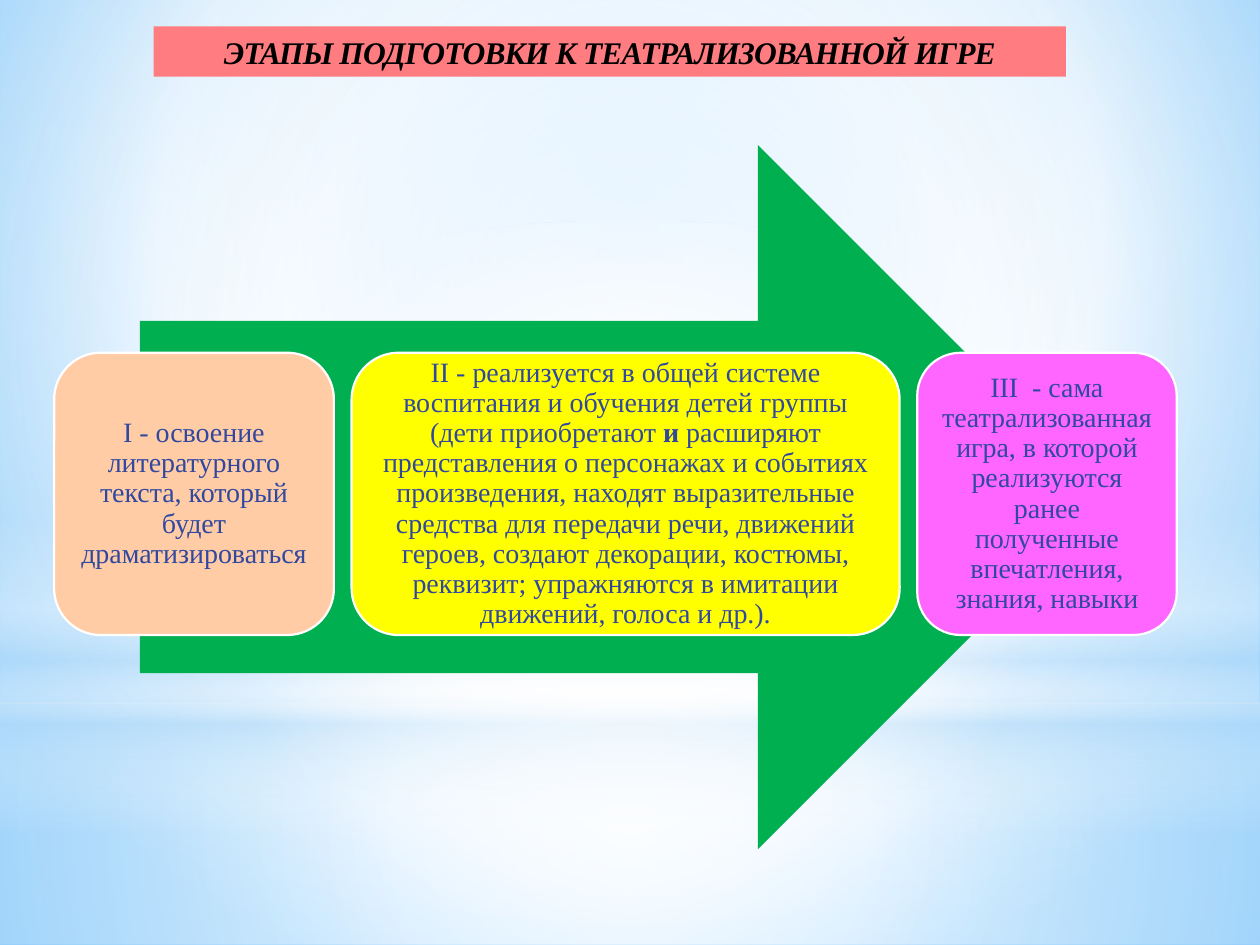
from dataclasses import dataclass
from typing import Optional

from lxml.etree import SubElement
from pptx import Presentation
from pptx.dml.color import RGBColor
from pptx.enum.shapes import MSO_SHAPE
from pptx.enum.text import MSO_ANCHOR, PP_ALIGN
from pptx.oxml.ns import qn
from pptx.util import Inches, Pt

# Grid of 100 columns by 75 rows
COLUMNS, ROWS = 100, 75
WIDTH, HEIGHT = Inches(10), Inches(7.5)
FONT = "Times New Roman"
INK, WHITE, SKY = "31489F", "FFFFFF", "B4DCFA"
CENTRE = (50, 50, 50, 50)


@dataclass
class Area:
    column: float
    row: float
    columns: float
    rows: float


@dataclass
class Gradient:
    stops: list  # (position %, colour, opacity %)
    focus: Optional[tuple] = None  # left, top, right, bottom %; None runs downwards


@dataclass
class Stage:
    columns: float
    colour: str
    runs: list  # (text, bold)


def rgb(colour: str) -> RGBColor:
    return RGBColor.from_string(colour)


def add_block(slide, kind, area: Area, colour: str):
    block = slide.shapes.add_shape(
        kind,
        int(WIDTH * area.column / COLUMNS), int(HEIGHT * area.row / ROWS),
        int(WIDTH * area.columns / COLUMNS), int(HEIGHT * area.rows / ROWS))
    block.shadow.inherit = False
    block.fill.solid()
    block.fill.fore_color.rgb = rgb(colour)
    block.line.fill.background()
    return block


def apply_gradient(element, gradient: Gradient) -> None:
    """Turn the first solid fill inside the element into a gradient."""
    solid = element.find(".//" + qn("a:solidFill"))
    fill = solid.makeelement(qn("a:gradFill"), {"rotWithShape": "1"})
    stops = SubElement(fill, qn("a:gsLst"))
    for position, colour, opacity in gradient.stops:
        stop = SubElement(stops, qn("a:gs"), pos=str(position * 1000))
        tint = SubElement(stop, qn("a:srgbClr"), val=colour)
        if opacity < 100:
            SubElement(tint, qn("a:alpha"), val=str(opacity * 1000))
    if gradient.focus:
        circle = SubElement(fill, qn("a:path"), {"path": "circle"})
        sides = {side: str(share * 1000) for side, share in zip("ltrb", gradient.focus)}
        SubElement(circle, qn("a:fillToRect"), sides)
    else:
        SubElement(fill, qn("a:lin"), ang=str(90 * 60000), scaled="0")
    solid.getparent().replace(solid, fill)


def add_run(paragraph, text: str, size: float, colour: str, bold=False, italic=False):
    run = paragraph.add_run()
    run.text = text
    font = run.font
    font.name, font.size, font.bold, font.italic = FONT, Pt(size), bold, italic
    font.color.rgb = rgb(colour)
    return run


def centred_paragraph(block):
    frame = block.text_frame
    frame.word_wrap = True
    frame.vertical_anchor = MSO_ANCHOR.MIDDLE
    paragraph = frame.paragraphs[0]
    paragraph.alignment = PP_ALIGN.CENTER
    return paragraph


def add_stage(slide, stage: Stage, area: Area) -> None:
    card = add_block(slide, MSO_SHAPE.ROUNDED_RECTANGLE, area, stage.colour)
    card.line.color.rgb = rgb(WHITE)
    card.line.width = Pt(1.25)
    paragraph = centred_paragraph(card)
    frame = card.text_frame
    frame.margin_left = frame.margin_right = Inches(0.07)
    frame.margin_top = frame.margin_bottom = Inches(0.07)
    paragraph.line_spacing = 0.9
    for text, bold in stage.runs:
        add_run(paragraph, text, 16, INK, bold)


BACKDROP = Gradient([(0, "9ED5FF", 100), (60, WHITE, 100), (100, "5BB9FF", 100)],
                    (20, 10, 20, 60))

# Translucent layers over the background
LAYERS = [
    (MSO_SHAPE.RECTANGLE, Area(0, 55.8, 100, 19.2),
     Gradient([(0, WHITE, 91), (37, WHITE, 76), (100, SKY, 79)], CENTRE)),
    (MSO_SHAPE.RECTANGLE, Area(0, 0, 100, 55.8),
     Gradient([(0, WHITE, 89), (48, WHITE, 62), (100, SKY, 79)], CENTRE)),
    (MSO_SHAPE.RECTANGLE, Area(0, 41.2, 100, 25),
     Gradient([(0, WHITE, 0), (29, WHITE, 30), (45, SKY, 40),
               (55, WHITE, 26), (65, SKY, 60), (100, WHITE, 0)])),
    (MSO_SHAPE.OVAL, Area(0, 17.5, 100, 55.8),
     Gradient([(0, WHITE, 100), (56, WHITE, 0)], CENTRE)),
]

STAGES = [
    Stage(22.2, "FFCCA6", [
        ("I - освоение литературного текста, который будет драматизироваться", False)]),
    Stage(43.5, "FFFF00", [
        ("II - реализуется в общей системе воспитания и обучения детей группы "
         "(дети приобретают ", False),
        ("и", True),
        (" расширяют представления о персонажах и событиях произведения, находят "
         "выразительные средства для передачи речи, движений героев, создают "
         "декорации, костюмы, реквизит; упражняются в имитации движений, "
         "голоса и др.).", False)]),
    Stage(20.6, "FF66FF", [
        ("III  - сама театрализованная игра, в которой реализуются ранее полученные "
         "впечатления, знания, навыки", False)]),
]
STAGE_LEFT, STAGE_TOP, STAGE_ROWS, STAGE_GAP = 4.3, 28, 22.4, 1.4


def main() -> None:
    deck = Presentation()
    deck.slide_width, deck.slide_height = WIDTH, HEIGHT
    slide = deck.slides.add_slide(deck.slide_layouts[6])

    # Background
    slide.background.fill.solid()
    slide.background.fill.fore_color.rgb = rgb(WHITE)
    apply_gradient(slide.element, BACKDROP)
    for kind, area, gradient in LAYERS:
        apply_gradient(add_block(slide, kind, area, WHITE).element, gradient)

    # Title
    title = add_block(slide, MSO_SHAPE.RECTANGLE, Area(12.2, 2.1, 72.4, 4), "FF7C80")
    heading = add_run(centred_paragraph(title), "ЭТАПЫ ПОДГОТОВКИ К ТЕАТРАЛИЗОВАННОЙ ИГРЕ",
                      18, "000000", bold=True, italic=True)
    heading.font._element.set("spc", "-50")

    # Arrow with the stages in a row
    add_block(slide, MSO_SHAPE.RIGHT_ARROW, Area(11.1, 11.5, 77, 55.9), "00B050")
    column = STAGE_LEFT
    for stage in STAGES:
        add_stage(slide, stage, Area(column, STAGE_TOP, stage.columns, STAGE_ROWS))
        column += stage.columns + STAGE_GAP

    deck.save("out.pptx")


if __name__ == "__main__":
    main()
